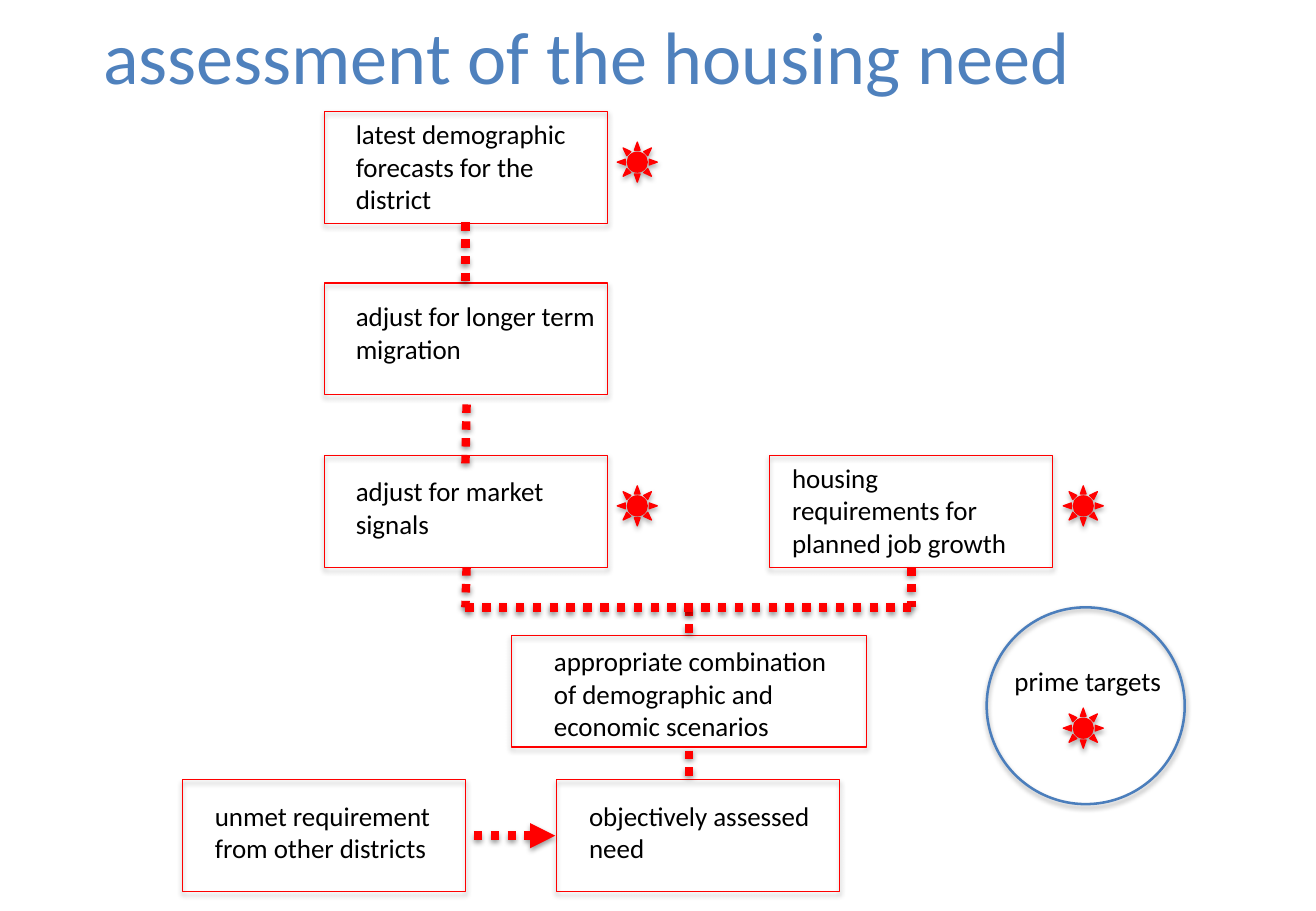
from pptx import Presentation
from pptx.dml.color import RGBColor
from pptx.enum.dml import MSO_LINE
from pptx.enum.shapes import MSO_CONNECTOR, MSO_SHAPE
from pptx.enum.text import MSO_ANCHOR
from pptx.oxml import parse_xml
from pptx.oxml.ns import nsdecls
from pptx.util import Inches, Pt

RED, BLUE, RING_BLUE, BLACK = "FF0000", "4F81BD", "4B7EBC", "000000"
BOX_WIDTH, BOX_HEIGHT = 2.33, 0.92
SUN_SIZE = 0.33
JOIN_Y = 5

# Left, top, width of each box; text offset right and down, text width; wording
STEPS = [
    (2.67, 0.92, BOX_WIDTH, 0.16, 0, 2.17, "latest demographic forecasts for the district"),
    (2.67, 2.33, BOX_WIDTH, 0.16, 0.09, 2.17, "adjust for longer term migration"),
    (2.67, 3.75, BOX_WIDTH, 0.16, 0.11, 2.17, "adjust for market signals"),
    (6.33, 3.75, BOX_WIDTH, 0.09, 0, 2.17, "housing requirements for planned job growth"),
    (4.21, 5.23, 2.92, 0.25, 0.03, 2.58,
     "appropriate combination of demographic and economic scenarios"),
    (1.5, 6.42, BOX_WIDTH, 0.17, 0.11, 2.17, "unmet requirement from other districts"),
    (4.58, 6.42, BOX_WIDTH, 0.17, 0.11, 2.17, "objectively assessed need"),
]
SUNS = [(5.08, 1.17), (5.08, 4), (8.75, 4)]
LINKS = [
    (3.83, 1.83, 3.83, 2.33),
    (3.84, 3.33, 3.83, 3.83),
    (3.84, 4.67, 3.83, JOIN_Y),
    (5.67, JOIN_Y, 5.67, 5.23),
    (7.5, 4.67, 7.5, JOIN_Y),
    (3.83, JOIN_Y, 7.5, JOIN_Y),
    (5.67, 6.18, 5.67, 6.42),
]


def color(value):
    return RGBColor.from_string(value)


def add_shadow(element, distance, opacity):
    element.spPr.append(parse_xml(
        f'<a:effectLst {nsdecls("a")}><a:outerShdw blurRad="{Pt(3.1)}" dist="{Pt(distance)}" '
        f'dir="5400000" rotWithShape="0"><a:srgbClr val="{BLACK}">'
        f'<a:alpha val="{opacity * 1000}"/></a:srgbClr></a:outerShdw></a:effectLst>'))


def add_outline(slide, kind, left, top, width, height, line=RED, weight=0.75, fill=None):
    shape = slide.shapes.add_shape(
        kind, Inches(left), Inches(top), Inches(width), Inches(height))
    if fill:
        shape.fill.solid()
        shape.fill.fore_color.rgb = color(fill)
    else:
        shape.fill.background()
    shape.line.color.rgb = color(line)
    shape.line.width = Pt(weight)
    add_shadow(shape.element, 1.8, 35)


def add_text(slide, left, top, width, height, text, size=16, text_color=BLACK,
             anchor=MSO_ANCHOR.TOP):
    box = slide.shapes.add_textbox(Inches(left), Inches(top), Inches(width), Inches(height))
    frame = box.text_frame
    frame.word_wrap = True
    frame.vertical_anchor = anchor
    paragraph = frame.paragraphs[0]
    paragraph.text = text
    paragraph.font.name = "Calibri"
    paragraph.font.size = Pt(size)
    paragraph.font.color.rgb = color(text_color)


def add_step(slide, left, top, width, indent, drop, text_width, text):
    add_outline(slide, MSO_SHAPE.RECTANGLE, left, top, width, BOX_HEIGHT)
    add_text(slide, left + indent, top + drop, text_width, BOX_HEIGHT - drop, text)


def add_sun(slide, left, top):
    add_outline(slide, MSO_SHAPE.SUN, left, top, SUN_SIZE, SUN_SIZE, fill=RED)


def add_link(slide, x1, y1, x2, y2, arrow=False):
    link = slide.shapes.add_connector(
        MSO_CONNECTOR.STRAIGHT, Inches(x1), Inches(y1), Inches(x2), Inches(y2))
    link.line.color.rgb = color(RED)
    link.line.width = Pt(5)
    link.line.dash_style = MSO_LINE.ROUND_DOT
    if arrow:
        link.line._get_or_add_ln().append(
            parse_xml(f'<a:tailEnd {nsdecls("a")} type="triangle"/>'))
    add_shadow(link.element, 1.6, 38)


def add_legend(slide, left, top, width, height):
    add_sun(slide, left + 0.63, top + 0.83)
    add_text(slide, left + 0.13, top + 0.42, 2.17, 0.37, "prime targets")
    add_outline(slide, MSO_SHAPE.OVAL, left, top, width, height, RING_BLUE, 1.5)


def add_flowchart(slide):
    for step in STEPS:
        add_step(slide, *step)
    for sun in SUNS:
        add_sun(slide, *sun)
    for link in LINKS:
        add_link(slide, *link)
    add_link(slide, 3.9, 6.88, 4.57, 6.88, arrow=True)


def main():
    presentation = Presentation()
    presentation.slide_width = Inches(10.83)
    presentation.slide_height = Inches(7.5)
    slide = presentation.slides.add_slide(presentation.slide_layouts[6])
    # Title
    add_text(slide, 0.75, -0.17, 9.5, 1.25, "assessment of the housing need",
             44, BLUE, MSO_ANCHOR.MIDDLE)
    # Steps, markers and links
    add_flowchart(slide)
    # Key to the markers
    add_legend(slide, 8.12, 5, 1.63, 1.62)
    presentation.save("out.pptx")


if __name__ == "__main__":
    main()
